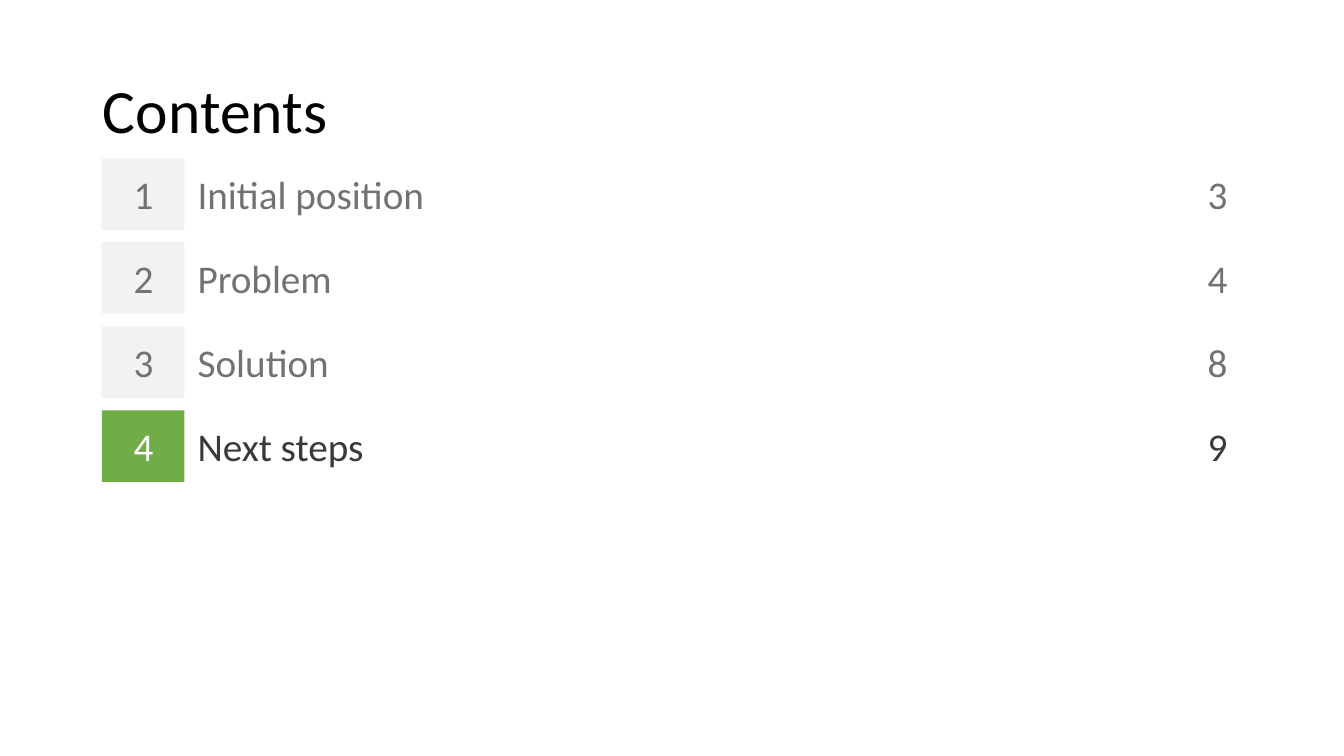
from dataclasses import dataclass

from pptx import Presentation
from pptx.dml.color import RGBColor
from pptx.enum.shapes import MSO_SHAPE
from pptx.enum.text import MSO_ANCHOR, PP_ALIGN
from pptx.util import Inches, Pt


@dataclass(frozen=True)
class Theme:
    font: str = "Calibri"
    head: int = 44
    body: int = 28
    black: str = "000000"
    dark: str = "3B3838"
    muted: str = "767171"
    white: str = "FFFFFF"
    pale: str = "F2F2F2"
    green: str = "70AD47"


theme = Theme()


def write(shape, text, size, color, align, pads=(0.1, 0.05, 0.1, 0.05)):
    """Set one line of text, centred vertically, inside a shape."""
    frame = shape.text_frame
    frame.word_wrap = True
    frame.vertical_anchor = MSO_ANCHOR.MIDDLE
    (frame.margin_left, frame.margin_top,
     frame.margin_right, frame.margin_bottom) = map(Inches, pads)
    line = frame.paragraphs[0]
    line.text = text
    line.alignment = align
    line.font.name = theme.font
    line.font.size = Pt(size)
    line.font.color.rgb = RGBColor.from_string(color)
    return line


deck = Presentation()
deck.slide_width, deck.slide_height = Inches(13.33), Inches(7.5)
slide = deck.slides.add_slide(deck.slide_layouts[5])
shapes = slide.shapes

# Title
title = shapes.title
title.left, title.top = Inches(0.92), Inches(0.4)
title.width, title.height = Inches(11.5), Inches(1.45)
line = write(title, "Contents", theme.head, theme.black, PP_ALIGN.LEFT)
line.line_spacing = 0.9

# Grid: left edge and width of each column, nine rows to the slide height
number, topic, page = [(Inches(x), Inches(w)) for x, w in
                       ((1.01, 0.82), (1.91, 9.68), (11.73, 0.69))]
start, height = Inches(1.57), Inches(0.71)
pitch = deck.slide_height // 9

# Agenda: topic and page, with the current one highlighted
agenda = [("Initial position", 3), ("Problem", 4),
          ("Solution", 8), ("Next steps", 9)]
current = 4

for index, (name, start_page) in enumerate(agenda, 1):
    top = start + (index - 1) * pitch
    active = index == current
    ink = theme.dark if active else theme.muted

    # Number tile
    left, width = number
    tile = shapes.add_shape(MSO_SHAPE.RECTANGLE, left, top, width, height)
    tile.shadow.inherit = False
    tile.fill.solid()
    tile.fill.fore_color.rgb = RGBColor.from_string(
        theme.green if active else theme.pale)
    tile.line.fill.background()
    write(tile, str(index), theme.body, theme.white if active else ink,
          PP_ALIGN.CENTER, (0.05, 0.05, 0.04, 0.05))

    # Topic and page number
    left, width = topic
    label = shapes.add_textbox(left, top, width, height)
    write(label, name, theme.body, ink, PP_ALIGN.LEFT, (0.05, 0.05, 0.1, 0.05))
    left, width = page
    folio = shapes.add_textbox(left, top, width, height)
    write(folio, str(start_page), theme.body, ink, PP_ALIGN.CENTER)

deck.save("out.pptx")
